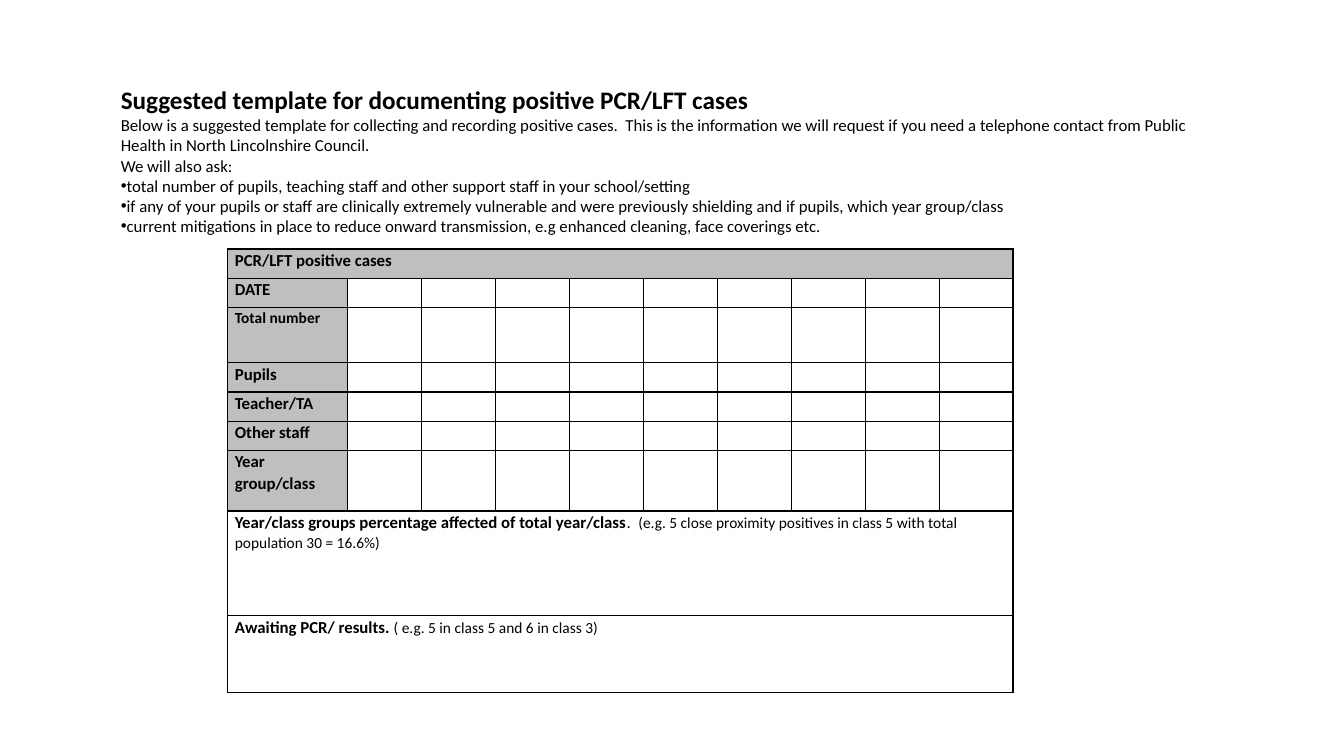
import pptx
import pptx.dml.color
import pptx.enum.text
import pptx.oxml.ns
import pptx.util
from lxml import etree

Inches = pptx.util.Inches
Pt = pptx.util.Pt
qn = pptx.oxml.ns.qn

theme = {
    "font": "Calibri",
    "ink": "000000",
    "label_fill": "BFBFBF",
    "title": 18,
    "body": 12,
    "small": 11,
    "border": 1,
}


def add_run(paragraph, text, size, bold=False):
    run = paragraph.add_run()
    run.text = text
    formats = {"name": theme["font"], "size": Pt(size), "bold": bold}
    for attribute, value in formats.items():
        setattr(run.font, attribute, value)
    run.font.color.rgb = pptx.dml.color.RGBColor.from_string(theme["ink"])


def add_borders(cell):
    properties = cell._tc.get_or_add_tcPr()
    for side in ("a:lnL", "a:lnR", "a:lnT", "a:lnB"):
        line = etree.SubElement(properties, qn(side), w=str(Pt(theme["border"])))
        fill = etree.SubElement(line, qn("a:solidFill"))
        etree.SubElement(fill, qn("a:srgbClr"), val=theme["ink"])


deck = pptx.Presentation()
deck.slide_width = Inches(13.33)
deck.slide_height = Inches(7.5)
slide = deck.slides.add_slide(deck.slide_layouts[6])

# Case table: wording, type size and bold of each run, row by row
body, small = theme["body"], theme["small"]
case_rows = [
    (0.29, [("PCR/LFT positive cases", body, True)]),
    (0.29, [("DATE", body, True)]),
    (0.55, [("Total number", small, True)]),
    (0.29, [("Pupils", body, True)]),
    (0.29, [("Teacher/TA", body, True)]),
    (0.29, [("Other staff", body, True)]),
    (0.6, [("Year group/class", body, True)]),
    (1.04, [
        ("Year/class groups percentage affected of total year/class", body, True),
        (".  ", body, False),
        ("(e.g. 5 close proximity positives in class 5 with total population 30 = 16.6%)",
         small, False),
    ]),
    (0.76, [
        ("Awaiting PCR/ results. ", body, True),
        ("( e.g. 5 in class 5 and 6 in class 3)", small, False),
    ]),
]
full_width_rows = (0, 7, 8)
unshaded_rows = (7, 8)
day_count = 9
table_width, label_width = 7.79, 1.19

cases = slide.shapes.add_table(
    len(case_rows), day_count + 1,
    Inches(2.26), Inches(2.47), Inches(table_width), Inches(4.43)).table
cases.first_row = False
cases.horz_banding = False
cases.columns[0].width = Inches(label_width)
for day in range(1, day_count + 1):
    cases.columns[day].width = Inches((table_width - label_width) / day_count)

cell_margins = {
    "margin_left": Inches(0.07),
    "margin_right": Inches(0.07),
    "margin_top": 0,
    "margin_bottom": 0,
}
for row, (height, label_runs) in enumerate(case_rows):
    cases.rows[row].height = Inches(height)
    for column in range(day_count + 1):
        cell = cases.cell(row, column)
        for attribute, value in cell_margins.items():
            setattr(cell, attribute, value)
        add_borders(cell)
        paragraph = cell.text_frame.paragraphs[0]
        if column == 0:
            paragraph.line_spacing = 1.07
            paragraph.space_after = Pt(8)
            for text, size, bold in label_runs:
                add_run(paragraph, text, size, bold)
        else:
            # Small type keeps the empty cells from stretching their row
            etree.SubElement(paragraph._p, qn("a:endParaRPr"), sz=str(body * 100))
        if column == 0 and row not in unshaded_rows:
            cell.fill.solid()
            cell.fill.fore_color.rgb = pptx.dml.color.RGBColor.from_string(
                theme["label_fill"])
        else:
            cell.fill.background()
    if row in full_width_rows:
        cases.cell(row, 0).merge(cases.cell(row, day_count))

# Introduction: text, size, bold, bulleted
intro_lines = [
    ("Suggested template for documenting positive PCR/LFT cases",
     theme["title"], True, False),
    ("Below is a suggested template for collecting and recording positive cases.  "
     "This is the information we will request if you need a telephone contact from "
     "Public Health in North Lincolnshire Council.", body, False, False),
    ("We will also ask:", body, False, False),
    ("total number of pupils, teaching staff and other support staff in your "
     "school/setting", body, False, True),
    ("if any of your pupils or staff are clinically extremely vulnerable and were "
     "previously shielding and if pupils, which year group/class", body, False, True),
    ("current mitigations in place to reduce onward transmission, e.g enhanced "
     "cleaning, face coverings etc.", body, False, True),
]
intro = slide.shapes.add_textbox(
    Inches(1.1), Inches(0.78), Inches(11.03), Inches(1.62)).text_frame
intro_format = {
    "word_wrap": True,
    "vertical_anchor": pptx.enum.text.MSO_ANCHOR.MIDDLE,
    "auto_size": pptx.enum.text.MSO_AUTO_SIZE.SHAPE_TO_FIT_TEXT,
}
for attribute, value in intro_format.items():
    setattr(intro, attribute, value)
for index, (text, size, bold, bulleted) in enumerate(intro_lines):
    paragraph = intro.add_paragraph() if index else intro.paragraphs[0]
    add_run(paragraph, text, size, bold)
    if bulleted:
        properties = paragraph._p.get_or_add_pPr()
        properties.set("marL", "0")
        properties.set("indent", "0")
        etree.SubElement(properties, qn("a:buFont"), typeface="Arial")
        etree.SubElement(properties, qn("a:buChar"), char="•")

deck.save("out.pptx")
